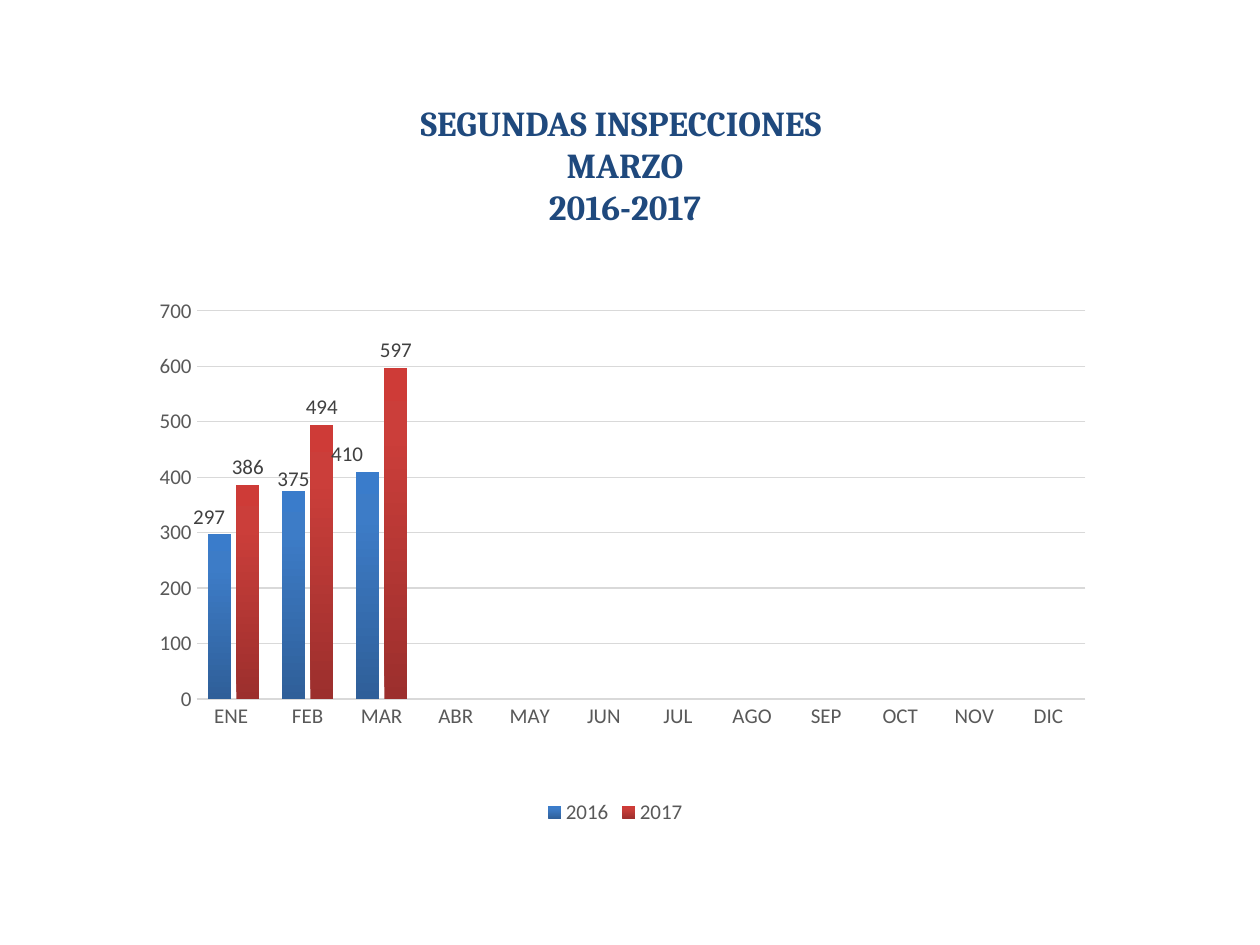
import pptx
import pptx.chart.data
import pptx.dml.color
import pptx.enum.chart
import pptx.enum.text
import pptx.oxml.ns
import pptx.oxml.xmlchemy
import pptx.util
from lxml import etree

Inches, Pt = pptx.util.Inches, pptx.util.Pt
qn = pptx.oxml.ns.qn

COLOURS = {"title": "1F497D", "axis": "595959", "label": "404040", "grid": "D9D9D9"}
TITLE = ["SEGUNDAS INSPECCIONES ", "MARZO", "2016-2017"]
MONTHS = ["ENE ", "FEB", "MAR", "ABR", "MAY", "JUN",
          "JUL", "AGO", "SEP", "OCT", "NOV", "DIC"]
INSPECTIONS = {"2016": [297, 375, 410], "2017": [386, 494, 597]}
GRADIENTS = {
    "2016": [(0, "2F5F99"), (80, "3D7CC7"), (100, "3A7CCB")],
    "2017": [(0, "9C2F2D"), (80, "CB3E3A"), (100, "CE3B37")],
}
# Shifts of the 2016 labels, as fractions of the chart's width and height
LABEL_SHIFTS = [(-0.01, 0), (0, 0.01), (-0.02, 0)]


def rgb(name):
    return pptx.dml.color.RGBColor.from_string(COLOURS[name])


def style_font(font, size, colour, face="Calibri"):
    font.size = Pt(size)
    font.name = face
    font.color.rgb = rgb(colour)


def make_layout(**settings):
    layout = pptx.oxml.xmlchemy.OxmlElement("c:layout")
    manual = etree.SubElement(layout, qn("c:manualLayout"))
    for name, value in settings.items():
        etree.SubElement(manual, qn(f"c:{name}")).set("val", str(value))
    return layout


def fill_gradient(fill, stops):
    fill.gradient()
    fill.gradient_angle = 90
    stop_list = fill.gradient_stops[0]._gs.getparent()
    for stop in list(stop_list):
        stop_list.remove(stop)
    for position, colour in stops:
        stop = etree.SubElement(stop_list, qn("a:gs"), pos=str(position * 1000))
        etree.SubElement(stop, qn("a:srgbClr"), val=colour)


def add_title(page, left, top, width, height):
    box = page.shapes.add_textbox(left, top, width, height)
    frame = box.text_frame
    frame.word_wrap = True
    frame.auto_size = pptx.enum.text.MSO_AUTO_SIZE.SHAPE_TO_FIT_TEXT
    for index, line in enumerate(TITLE):
        para = frame.add_paragraph() if index else frame.paragraphs[0]
        para.alignment = pptx.enum.text.PP_ALIGN.CENTER
        span = para.add_run()
        span.text = line
        span.font.bold = True
        style_font(span.font, 20, "title", "Cambria")


def style_axes(chart):
    for axis in (chart.category_axis, chart.value_axis):
        axis.major_tick_mark = pptx.enum.chart.XL_TICK_MARK.NONE
        axis.minor_tick_mark = pptx.enum.chart.XL_TICK_MARK.NONE
        style_font(axis.tick_labels.font, 12, "axis")
    baseline = chart.category_axis.format.line
    baseline.color.rgb = rgb("grid")
    baseline.width = Pt(1)
    values = chart.value_axis
    values.minimum_scale, values.maximum_scale, values.major_unit = 0, 700, 100
    values.format.line.fill.background()
    grid = values.major_gridlines.format.line
    grid.color.rgb = rgb("grid")
    grid.width = Pt(0.75)


def style_series(series):
    fill_gradient(series.format.fill, GRADIENTS[series.name])
    series.invert_if_negative = False
    labels = series.data_labels
    labels.show_value = True
    labels.position = pptx.enum.chart.XL_LABEL_POSITION.OUTSIDE_END
    style_font(labels.font, 12, "label")


def shift_labels(series):
    for index in range(len(LABEL_SHIFTS)):
        label = series.points[index].data_label
        style_font(label.font, 12, "label")
        label.position = pptx.enum.chart.XL_LABEL_POSITION.OUTSIDE_END
    for item, (x, y) in zip(series._element.iter(qn("c:dLbl")), LABEL_SHIFTS):
        item.insert(1, make_layout(x=x, y=y))


def add_inspections_chart(page, left, top, width, height):
    data = pptx.chart.data.CategoryChartData()
    data.categories = MONTHS
    for year, values in INSPECTIONS.items():
        data.add_series(year, values + [None] * (len(MONTHS) - len(values)))
    chart = page.shapes.add_chart(
        pptx.enum.chart.XL_CHART_TYPE.COLUMN_CLUSTERED,
        left, top, width, height, data).chart
    chart.has_title = False
    chart.font.size = Pt(10)
    chart.font.name = "Calibri"

    # Columns and their labels
    plot = chart.plots[0]
    plot.gap_width = 100
    plot.overlap = -24
    plot.vary_by_categories = False
    for series in plot.series:
        style_series(series)
    shift_labels(plot.series[0])
    style_axes(chart)

    # Legend
    chart.has_legend = True
    chart.legend.position = pptx.enum.chart.XL_LEGEND_POSITION.BOTTOM
    chart.legend.include_in_layout = False
    style_font(chart.legend.font, 12, "axis")

    # Inner plot area
    area = chart._chartSpace.find(".//" + qn("c:plotArea"))
    for layout in area.findall(qn("c:layout")):
        area.remove(layout)
    area.insert(0, make_layout(layoutTarget="inner", xMode="edge", yMode="edge",
                               x=0.09, y=0.05, w=0.87, h=0.71))


def main():
    deck = pptx.Presentation()
    deck.slide_width, deck.slide_height = Inches(10), Inches(7.5)
    page = deck.slides.add_slide(deck.slide_layouts[6])
    add_title(page, Inches(1.3), Inches(0.76), Inches(7.32), Inches(1.11))
    add_inspections_chart(page, Inches(0.83), Inches(2.25), Inches(8.11), Inches(4.34))
    deck.save("out.pptx")


if __name__ == "__main__":
    main()
